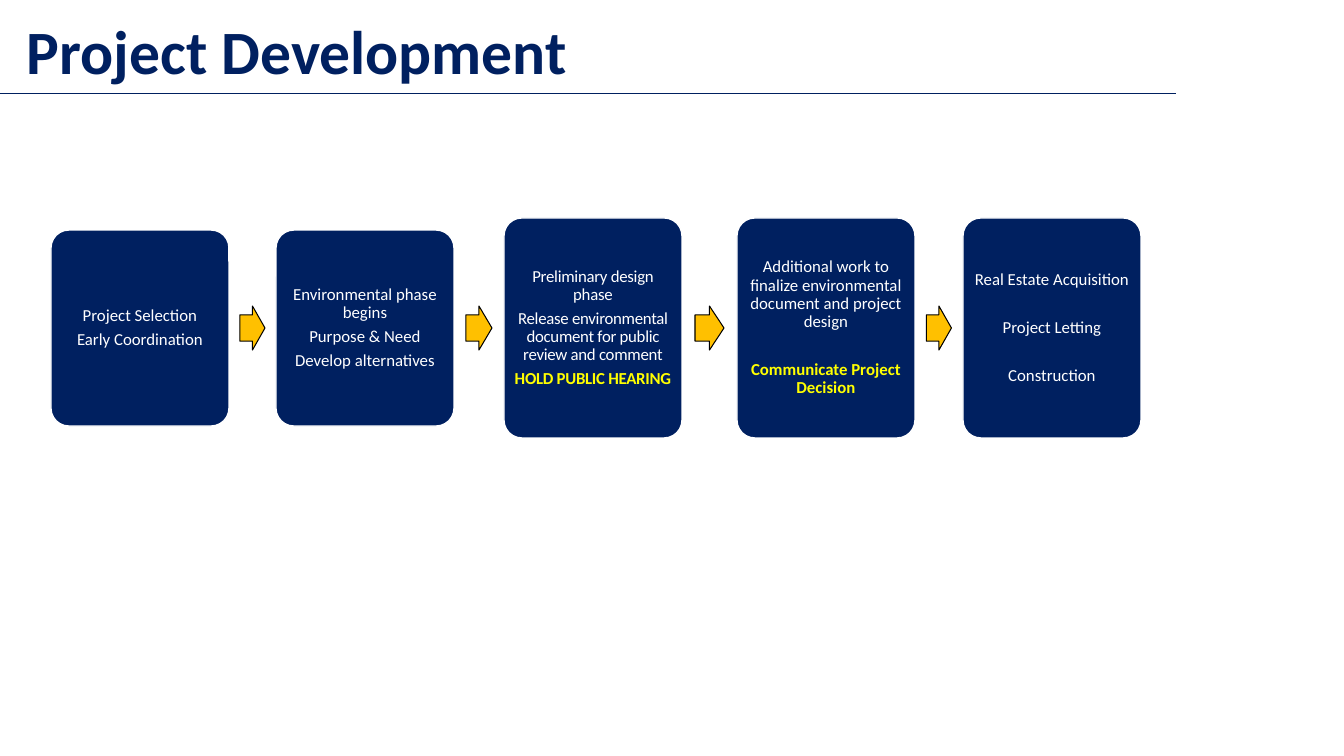
from pptx import Presentation
from pptx.dml.color import RGBColor
from pptx.enum.shapes import MSO_CONNECTOR, MSO_SHAPE
from pptx.enum.text import MSO_ANCHOR, PP_ALIGN
from pptx.oxml.ns import qn
from pptx.util import Emu, Pt
from lxml import etree

NAVY = RGBColor(0x00, 0x20, 0x60)
GOLD = RGBColor(0xFF, 0xC0, 0x00)
YELLOW = RGBColor(0xFF, 0xFF, 0x00)
WHITE = RGBColor(0xFF, 0xFF, 0xFF)
BLACK = RGBColor(0x00, 0x00, 0x00)
ROUNDED, ARROW = MSO_SHAPE.ROUNDED_RECTANGLE, MSO_SHAPE.RIGHT_ARROW
STRAIGHT = MSO_CONNECTOR.STRAIGHT
CENTER = PP_ALIGN.CENTER
MIDDLE, BOTTOM = MSO_ANCHOR.MIDDLE, MSO_ANCHOR.BOTTOM

TITLE = "Project Development"
KEY_STEPS = {"HOLD PUBLIC HEARING", "Communicate Project Decision"}
# left px, height px, points after each step, letter spacing in 1/100 pt, steps
PHASES = [
    (51, 196, 4.2, 0, ["Project Selection", "Early Coordination"]),
    (276, 196, 4.2, 0, ["Environmental phase begins", "Purpose & Need",
                        "Develop alternatives"]),
    (504, 220, 4.2, -20, ["Preliminary design phase",
                          "Release environmental document for public review and comment",
                          "HOLD PUBLIC HEARING"]),
    (737, 220, 21.6, 0, ["Additional work to finalize environmental document and project design",
                         "Communicate Project Decision"]),
    (963, 220, 21.6, 0, ["Real Estate Acquisition", "Project Letting", "Construction"]),
]
LAST_SPACE = 4.2
CARD_WIDTH, MID_Y = 178, 328
ARROW_HEIGHT, ARROW_SHARE = 44, 0.53
RULE_Y, RULE_END = 93, 1176


def px(length):
    return Emu(round(length * 914400 / 100.8))


def add_flow_shape(slide, kind, left, width, height, fill, line, line_width, adjustments):
    """Add a preset shape centred on the flow's axis."""
    shape = slide.shapes.add_shape(kind, px(left), px(MID_Y - height / 2), px(width), px(height))
    shape.shadow.inherit = False
    shape.fill.solid()
    shape.fill.fore_color.rgb = fill
    shape.line.color.rgb = line
    shape.line.width = Pt(line_width)
    for index, value in enumerate(adjustments):
        shape.adjustments[index] = value
    return shape


def style(paragraph, size, color, bold):
    paragraph.line_spacing = 0.9
    font = paragraph.font
    font.name, font.size, font.bold = "Calibri", Pt(size), bold
    font.color.rgb = color


def write_steps(card, steps, gap, tracking):
    frame = card.text_frame
    frame.word_wrap = True
    frame.vertical_anchor = MIDDLE
    frame.margin_left = frame.margin_right = px(5)
    frame.margin_top = frame.margin_bottom = px(5)
    for index, step in enumerate(steps):
        paragraph = frame.add_paragraph() if index else frame.paragraphs[0]
        run = paragraph.add_run()
        run.text = step
        if tracking:
            run._r.get_or_add_rPr().set("spc", str(tracking))
        paragraph.alignment = CENTER
        paragraph.space_after = Pt(LAST_SPACE if step == steps[-1] else gap)
        key = step in KEY_STEPS
        style(paragraph, 12, YELLOW if key else WHITE, key)


def add_heading(slide):
    rule = slide.shapes.add_connector(STRAIGHT, 0, px(RULE_Y), px(RULE_END), px(RULE_Y))
    rule.line.color.rgb = NAVY
    rule.line.width = Pt(0.5)
    etree.SubElement(rule._element.spPr, qn("a:effectLst"))

    heading = slide.shapes.add_textbox(px(17), 0, px(1310), px(RULE_Y))
    frame = heading.text_frame
    frame.word_wrap = True
    frame.vertical_anchor = BOTTOM
    frame.text = TITLE
    style(frame.paragraphs[0], 44, NAVY, True)


def add_flow(slide):
    previous_right = None
    for left, height, gap, tracking, steps in PHASES:
        if previous_right is not None:
            space = left - previous_right
            width = round(space * ARROW_SHARE)
            add_flow_shape(slide, ARROW, previous_right + (space - width) / 2, width,
                           ARROW_HEIGHT, GOLD, BLACK, 0.75, [0.6, 0.5])
        card = add_flow_shape(slide, ROUNDED, left, CARD_WIDTH, height, NAVY, WHITE, 1, [0.1])
        write_steps(card, steps, gap, tracking)
        previous_right = left + CARD_WIDTH


def main():
    deck = Presentation()
    deck.slide_width, deck.slide_height = px(1344), px(756)
    slide = deck.slides.add_slide(deck.slide_layouts[6])
    add_heading(slide)
    add_flow(slide)
    deck.save("out.pptx")


if __name__ == "__main__":
    main()
